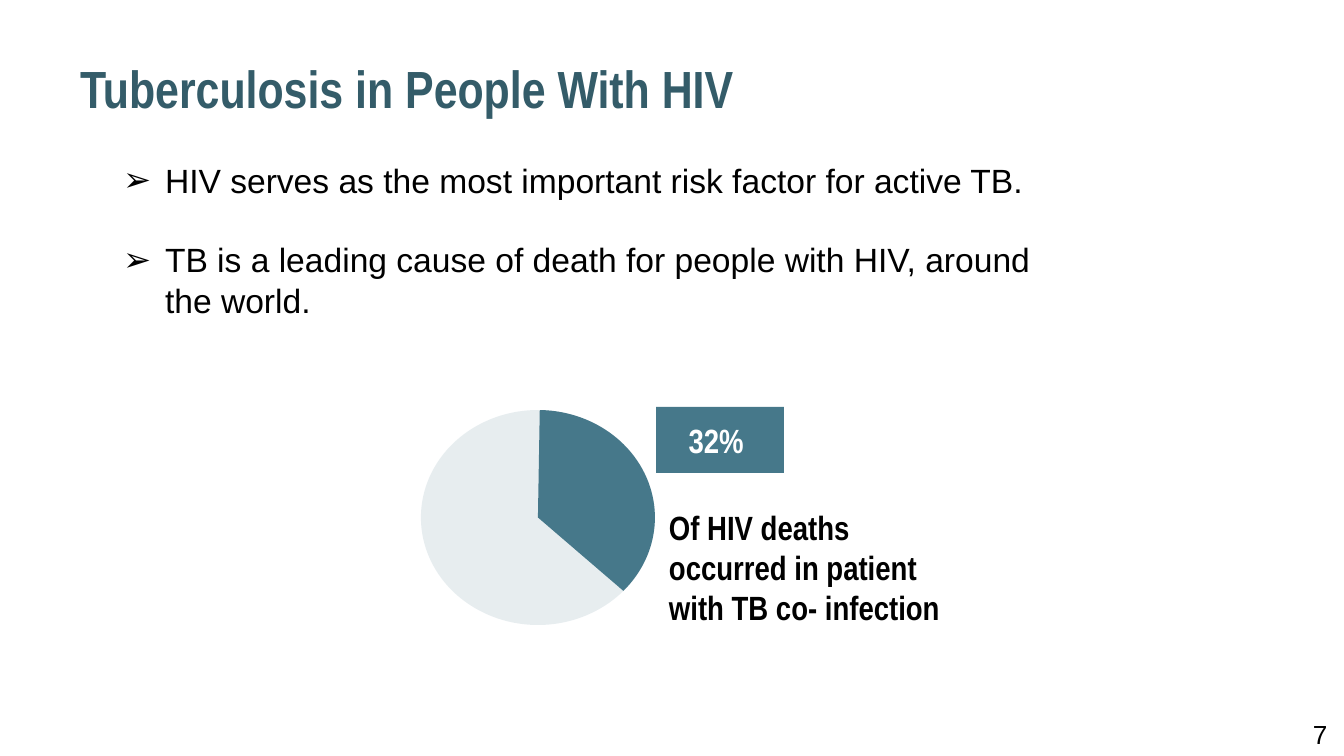
from lxml.etree import SubElement
from pptx import Presentation
from pptx.dml.color import RGBColor
from pptx.enum.shapes import MSO_SHAPE as Shape
from pptx.enum.text import MSO_ANCHOR as Anchor, MSO_AUTO_SIZE as AutoSize, PP_ALIGN as Align
from pptx.oxml.ns import qn
from pptx.util import Pt

# Content
TITLE = "Tuberculosis in People With HIV"
POINTS = [
    "HIV serves as the most important risk factor for active TB.",
    "TB is a leading cause of death for people with HIV, around the world.",
]
SHARE = "32% "
SHARE_CAPTION = "Of HIV deaths occurred in patient with TB co- infection"
PAGE = "7"

# Theme
THEME = {
    "heading_font": "Arial Narrow", "body_font": "Arial",
    "heading": "345C69", "accent": "46788A", "text": "000000", "light": "FFFFFF",
    "title_size": 28, "body_size": 18, "page_size": 14,
    "disc_opacity": 13,
}

# Layout in px
PX = 914400 / 134.4
SLIDE = (1344, 756)
TITLE_BOX = (67, 60, 1210, 55)
POINTS_BOX = (110, 153, 968, 176)
PIE_BOX = (421, 410, 234, 215)
SHARE_BOX = (656, 407, 128, 66)
CAPTION_BOX = (656, 508, 325, 118)
PAGE_BOX = (1300, 711, 44, 46)
INSET, TIGHT_INSET = 13, 7
HANGING, POINT_GAP = 42, 39
SLICE_ANGLES = (271, 40.65)  # start and end, degrees clockwise from the right


def emu(px):
    return round(px * PX)


def place(shape, box):
    shape.left, shape.top, shape.width, shape.height = map(emu, box)


def frame_text(shape, anchor=Anchor.MIDDLE, inset=INSET):
    frame = shape.text_frame
    frame.word_wrap = True
    frame.auto_size = AutoSize.NONE
    frame.vertical_anchor = anchor
    frame.margin_left = frame.margin_right = emu(INSET)
    frame.margin_top = frame.margin_bottom = emu(inset)
    return frame


def write(paragraph, text, size, color="text", font="body_font", bold=False, align=Align.LEFT):
    paragraph.alignment = align
    run = paragraph.add_run()
    run.text = text
    run.font.name = THEME[font]
    run.font.size = Pt(THEME[size])
    run.font.bold = bold
    run.font.color.rgb = RGBColor.from_string(THEME[color])


def add_filled(shapes, kind, box):
    shape = shapes.add_shape(kind, *map(emu, box))
    shape.shadow.inherit = False
    shape.fill.solid()
    shape.fill.fore_color.rgb = RGBColor.from_string(THEME["accent"])
    shape.line.fill.background()
    return shape


def add_bullet(paragraph):
    props = paragraph._p.get_or_add_pPr()
    props.set("marL", str(emu(HANGING)))
    props.set("indent", str(-emu(HANGING)))
    color = SubElement(props, qn("a:buClr"))
    SubElement(color, qn("a:srgbClr"), val=THEME["text"])
    SubElement(props, qn("a:buFont"), typeface=THEME["body_font"])
    SubElement(props, qn("a:buChar"), char="➢")


deck = Presentation()
deck.slide_width, deck.slide_height = map(emu, SLIDE)
slide = deck.slides.add_slide(deck.slide_layouts[1])
title, points = slide.placeholders

# Title
place(title, TITLE_BOX)
write(frame_text(title).paragraphs[0], TITLE, "title_size", "heading", "heading_font", True)

# Pie: pale disc with the share as a slice
pie = slide.shapes.add_group_shape()
disc = add_filled(pie.shapes, Shape.OVAL, PIE_BOX)
disc_color = disc.fill._xPr.find(qn("a:solidFill"))[0]
SubElement(disc_color, qn("a:alpha"), val=str(THEME["disc_opacity"] * 1000))
share_slice = add_filled(pie.shapes, Shape.PIE, PIE_BOX)
for i, angle in enumerate(SLICE_ANGLES):
    share_slice.adjustments[i] = angle * 0.6  # 60000 units a degree, scaled by 100000

# Share label and caption
share = add_filled(slide.shapes, Shape.RECTANGLE, SHARE_BOX)
write(frame_text(share).paragraphs[0], SHARE, "body_size", "light", "heading_font", True, Align.CENTER)
caption = slide.shapes.add_textbox(*map(emu, CAPTION_BOX))
write(frame_text(caption).paragraphs[0], SHARE_CAPTION, "body_size", font="heading_font", bold=True)

# Page number
page = slide.shapes.add_textbox(*map(emu, PAGE_BOX))
write(frame_text(page, Anchor.TOP, TIGHT_INSET).paragraphs[0], PAGE, "page_size")

# Bulleted points
place(points, POINTS_BOX)
points_frame = frame_text(points, Anchor.TOP, TIGHT_INSET)
for i, point in enumerate(POINTS):
    paragraph = points_frame.add_paragraph() if i else points_frame.paragraphs[0]
    paragraph.space_before = emu(POINT_GAP) if i else Pt(0)
    write(paragraph, point, "body_size")
    add_bullet(paragraph)

deck.save("out.pptx")
